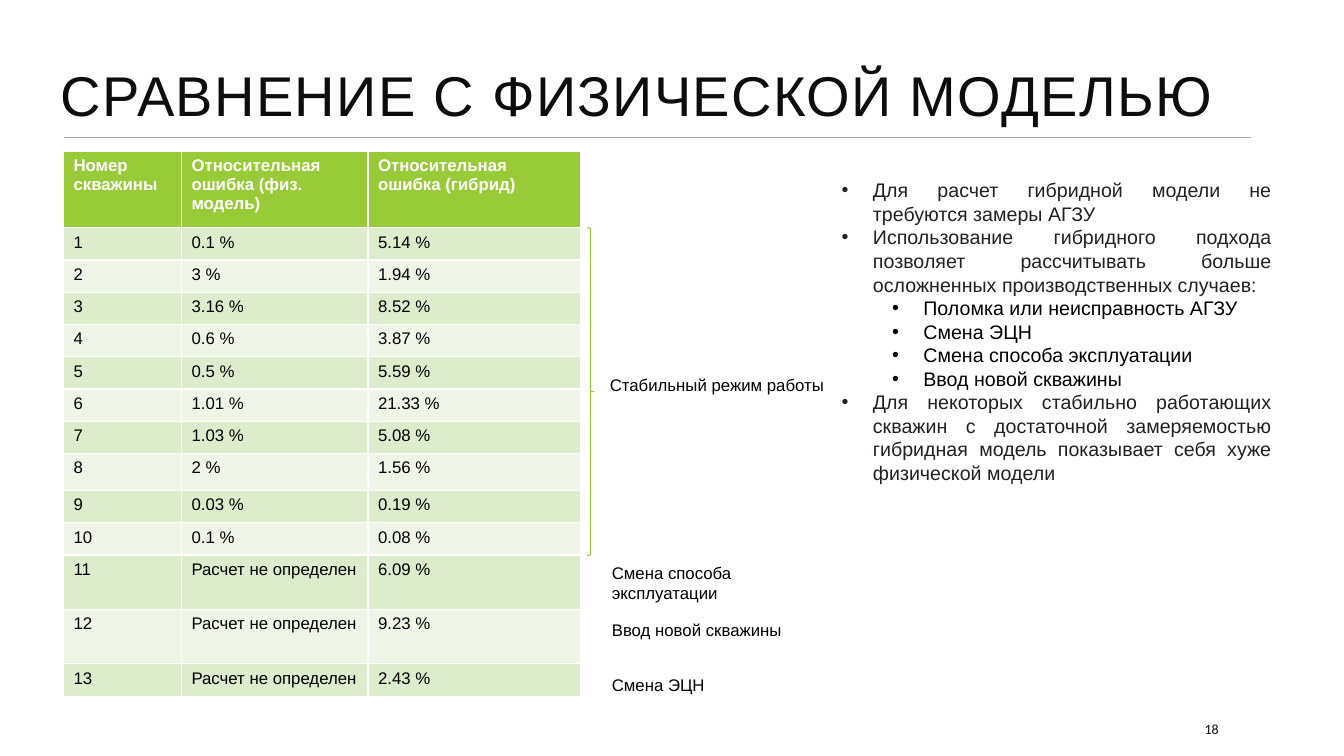
from lxml.etree import SubElement
from pptx import Presentation
from pptx.dml.color import RGBColor
from pptx.enum.shapes import MSO_CONNECTOR, MSO_SHAPE
from pptx.enum.text import MSO_ANCHOR, PP_ALIGN
from pptx.oxml.ns import qn
from pptx.util import Emu, Pt

TITLE = "СРАВНЕНИЕ С ФИЗИЧЕСКОЙ МОДЕЛЬЮ"
PAGE_NUMBER = "18"
HEADINGS = (
    "Номер скважины",
    "Относительная ошибка (физ. модель)",
    "Относительная ошибка (гибрид)",
)
UNDEFINED = "Расчет не определен"
WELL_ERRORS = [
    ("0.1 %", "5.14 %"),
    ("3 %", "1.94 %"),
    ("3.16 %", "8.52 %"),
    ("0.6 %", "3.87 %"),
    ("0.5 %", "5.59 %"),
    ("1.01 %", "21.33 %"),
    ("1.03 %", "5.08 %"),
    ("2 %", "1.56 %"),
    ("0.03 %", "0.19 %"),
    ("0.1 %", "0.08 %"),
    (UNDEFINED, "6.09 %"),
    (UNDEFINED, "9.23 %"),
    (UNDEFINED, "2.43 %"),
]
WELL_NOTES = [
    ("Стабильный режим работы", (595, 367, 243, 30)),
    ("Смена способа эксплуатации", (597, 553, 243, 50)),
    ("Ввод новой скважины", (597, 610, 243, 30)),
    ("Смена ЭЦН", (597, 664, 243, 30)),
]
CONCLUSIONS = [
    (0, "Для расчет гибридной модели не требуются замеры АГЗУ"),
    (0, "Использование гибридного подхода позволяет рассчитывать больше "
        "осложненных производственных случаев:"),
    (1, "Поломка или неисправность АГЗУ"),
    (1, "Смена ЭЦН"),
    (1, "Смена способа эксплуатации"),
    (1, "Ввод новой скважины"),
    (0, "Для некоторых стабильно работающих скважин с достаточной "
        "замеряемостью гибридная модель показывает себя хуже физической модели"),
]

PX = 9144
COLUMN_WIDTHS = (117, 185, 211)
ROW_HEIGHT = 32
SPECIAL_ROW_HEIGHTS = {0: 76, 8: 37, 11: 54, 12: 54}
BULLET_INDENT = 31
LEVEL_STEP = 50

GREEN = RGBColor(0x99, 0xCB, 0x38)
BAND_DARK = RGBColor(0xDE, 0xEC, 0xCE)
BAND_LIGHT = RGBColor(0xEF, 0xF6, 0xE8)
RULE_GREY = RGBColor(0xA6, 0xA6, 0xA6)
INK = RGBColor(0x0D, 0x0D, 0x0D)
CHARCOAL = RGBColor(0x24, 0x20, 0x21)
BLACK = RGBColor(0, 0, 0)
WHITE = RGBColor(0xFF, 0xFF, 0xFF)


def px(*lengths):
    return [Emu(length * PX) for length in lengths]


def add_run(paragraph, text, size, color, font="Arial", bold=False):
    run = paragraph.add_run()
    run.text = text
    run.font.name = font
    run.font.size = Pt(size)
    run.font.bold = bold
    run.font.color.rgb = color
    return run


def add_frame(slide, box, anchor=MSO_ANCHOR.TOP):
    frame = slide.shapes.add_textbox(*px(*box)).text_frame
    frame.word_wrap = True
    frame.vertical_anchor = anchor
    return frame


def add_title(slide):
    paragraph = add_frame(slide, (50, 63, 1191, 74), MSO_ANCHOR.MIDDLE).paragraphs[0]
    paragraph.line_spacing = 0.8
    title = add_run(paragraph, TITLE, 40, INK)
    title.font._element.set("spc", "100")
    rule = slide.shapes.add_connector(MSO_CONNECTOR.STRAIGHT, *px(63, 136, 1241, 136))
    rule.line.color.rgb = RULE_GREY
    rule.line.width = Pt(0.75)
    SubElement(rule._element.spPr, qn("a:effectLst"))


def add_error_table(slide):
    rows = [HEADINGS] + [
        (str(number), *errors) for number, errors in enumerate(WELL_ERRORS, 1)
    ]
    heights = [SPECIAL_ROW_HEIGHTS.get(i, ROW_HEIGHT) for i in range(len(rows))]
    errors_table = slide.shapes.add_table(
        len(rows), len(HEADINGS), *px(63, 150, sum(COLUMN_WIDTHS), sum(heights))
    ).table
    for column, width in zip(errors_table.columns, px(*COLUMN_WIDTHS)):
        column.width = width
    for row, height in zip(errors_table.rows, px(*heights)):
        row.height = height
    for i, row in enumerate(rows):
        heading = i == 0
        band = GREEN if heading else BAND_DARK if i % 2 else BAND_LIGHT
        for j, text in enumerate(row):
            cell = errors_table.cell(i, j)
            cell.fill.solid()
            cell.fill.fore_color.rgb = band
            add_run(cell.text_frame.paragraphs[0], text, 12,
                    WHITE if heading else BLACK, bold=heading)


def add_well_notes(slide):
    brace = slide.shapes.add_shape(MSO_SHAPE.RIGHT_BRACE, *px(582, 226, 7, 325))
    brace.shadow.inherit = False
    brace.fill.background()
    brace.line.color.rgb = GREEN
    brace.line.width = Pt(0.75)
    for note, box in WELL_NOTES:
        add_run(add_frame(slide, box).paragraphs[0], note, 12, BLACK)


def add_conclusions(slide):
    frame = add_frame(slide, (825, 172, 446, 340))
    for i, (level, conclusion) in enumerate(CONCLUSIONS):
        paragraph = frame.add_paragraph() if i else frame.paragraphs[0]
        paragraph.alignment = PP_ALIGN.JUSTIFY
        paragraph.level = level
        properties = paragraph._p.get_or_add_pPr()
        properties.set("marL", str((BULLET_INDENT + level * LEVEL_STEP) * PX))
        properties.set("indent", str(-BULLET_INDENT * PX))
        SubElement(properties, qn("a:buFont"), typeface="Arial")
        SubElement(properties, qn("a:buChar"), char="•")
        add_run(paragraph, conclusion, 14, BLACK if level else CHARCOAL)


def main():
    deck = Presentation()
    deck.slide_width, deck.slide_height = px(1333, 750)
    slide = deck.slides.add_slide(deck.slide_layouts[6])
    page = add_frame(slide, (1185, 708, 106, 30), MSO_ANCHOR.MIDDLE)
    add_run(page.paragraphs[0], PAGE_NUMBER, 10, INK, font="Calibri")
    add_title(slide)
    add_conclusions(slide)
    add_error_table(slide)
    add_well_notes(slide)
    deck.save("out.pptx")


if __name__ == "__main__":
    main()
